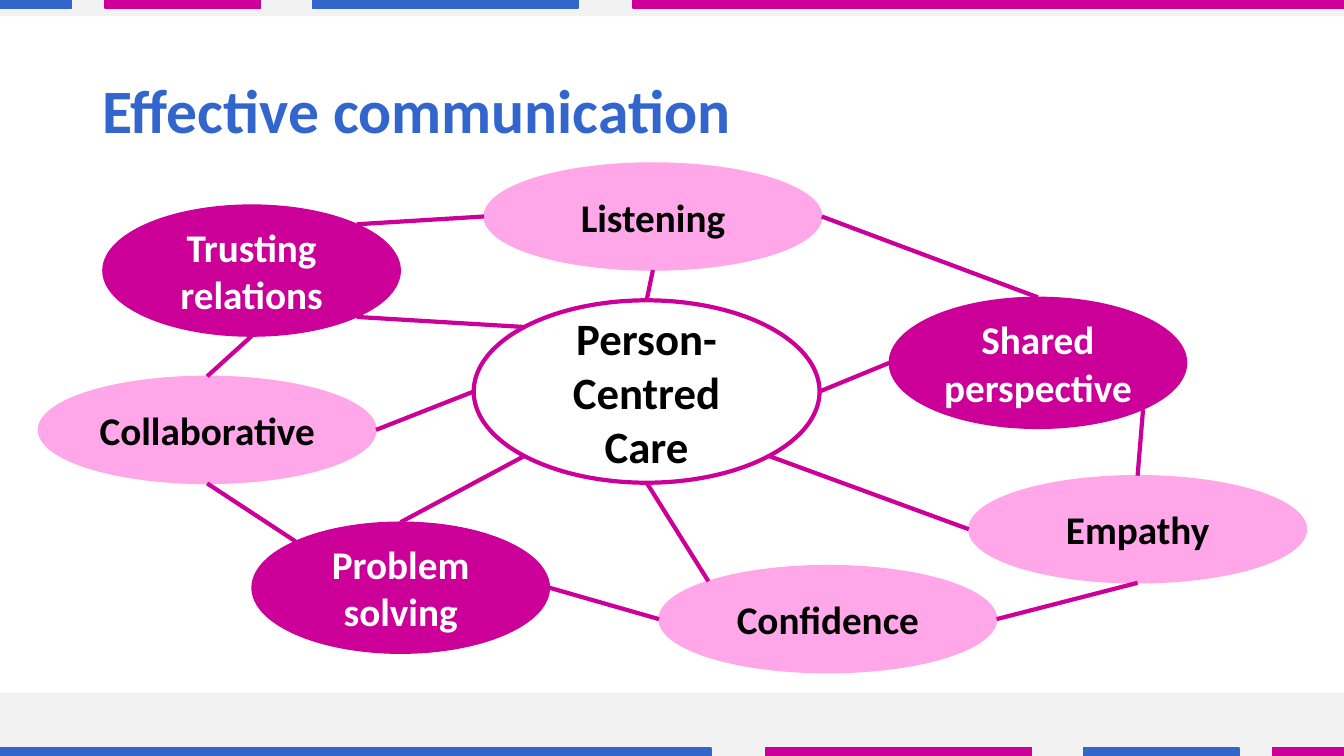
from math import sqrt

from lxml.etree import SubElement
from pptx import Presentation
from pptx.dml.color import RGBColor
from pptx.enum.shapes import MSO_CONNECTOR, MSO_SHAPE
from pptx.enum.text import MSO_ANCHOR, PP_ALIGN
from pptx.oxml.ns import qn
from pptx.util import Pt

WIDTH, HEIGHT = 960, 540
BLUE, MAGENTA, PINK, GREY = "3366CC", "CC0099", "FFA7E8", "F2F2F2"
WHITE, BLACK = "FFFFFF", "000000"
BAR_HEIGHT = 5.8
DIAGONAL = sqrt(0.5)
SITES = {
    "top": (0, -1), "bottom": (0, 1), "left": (-1, 0), "right": (1, 0),
    "top left": (-DIAGONAL, -DIAGONAL), "top right": (DIAGONAL, -DIAGONAL),
    "bottom left": (-DIAGONAL, DIAGONAL), "bottom right": (DIAGONAL, DIAGONAL),
}


def colour(hex_string):
    return RGBColor.from_string(hex_string)


class CommunicationSlide:
    """Draws the bands, title, ellipses and links of one slide in a shared style."""

    font_name = "Calibri"

    def __init__(self, slide):
        self.slide = slide
        self.ellipses = {}

    def style_text(self, paragraph, size, text_colour, align):
        paragraph.alignment = align
        paragraph.font.name = self.font_name
        paragraph.font.size = Pt(size)
        paragraph.font.bold = True
        paragraph.font.color.rgb = colour(text_colour)

    def shape(self, kind, box, fill, outline=None, outline_width=1):
        shape = self.slide.shapes.add_shape(kind, *map(Pt, box))
        shape.shadow.inherit = False
        shape.fill.solid()
        shape.fill.fore_color.rgb = colour(fill)
        if outline:
            shape.line.color.rgb = colour(outline)
            shape.line.width = Pt(outline_width)
        else:
            shape.line.fill.background()
        return shape

    def band(self, top, height):
        self.shape(MSO_SHAPE.RECTANGLE, (0, top, WIDTH, height), GREY)

    def bar(self, left, top, width, fill):
        self.shape(MSO_SHAPE.RECTANGLE, (left, top, width, BAR_HEIGHT), fill, fill)

    def title(self, text, box):
        title = self.slide.shapes.title
        title.left, title.top, title.width, title.height = map(Pt, box)
        frame = title.text_frame
        frame.text = text
        frame.word_wrap = True
        frame.vertical_anchor = MSO_ANCHOR.MIDDLE
        heading = frame.paragraphs[0]
        heading.line_spacing = 0.9
        self.style_text(heading, 44, BLUE, PP_ALIGN.LEFT)

    def ellipse(self, text, position, size, fill, outline, outline_width, text_size, text_colour):
        ellipse = self.shape(MSO_SHAPE.OVAL, position + size, fill, outline, outline_width)
        frame = ellipse.text_frame
        frame.text = text
        frame.word_wrap = True
        frame.vertical_anchor = MSO_ANCHOR.MIDDLE
        self.style_text(frame.paragraphs[0], text_size, text_colour, PP_ALIGN.CENTER)
        self.ellipses[text] = ellipse

    def site(self, topic, side):
        ellipse = self.ellipses[topic]
        across, down = SITES[side]
        return (int(ellipse.left + ellipse.width * (1 + across) / 2),
                int(ellipse.top + ellipse.height * (1 + down) / 2))

    def link(self, start, start_side, end, end_side):
        link = self.slide.shapes.add_connector(
            MSO_CONNECTOR.STRAIGHT, *self.site(start, start_side), *self.site(end, end_side))
        link.line.color.rgb = colour(MAGENTA)
        link.line.width = Pt(3)
        SubElement(link._element.spPr, qn("a:effectLst"))


CARE, LISTENING, TRUST = "Person-Centred Care", "Listening", "Trusting relations"
SHARED, EMPATHY, CONFIDENCE = "Shared perspective", "Empathy", "Confidence"
PROBLEM, COLLABORATIVE = "Problem solving", "Collaborative"

CENTRE = ((247, 130.3), WHITE, MAGENTA, 3, 32, BLACK)
DARK = ((212.4, 93.6), MAGENTA, MAGENTA, 1, 28, WHITE)
LIGHT = ((241.2, 76.5), PINK, PINK, 1, 28, BLACK)

TOPICS = [
    (CARE, (338.4, 214.5), CENTRE),
    (PROBLEM, (180, 373), DARK),
    (TRUST, (73.5, 146.5), DARK),
    (EMPATHY, (692, 339.8), LIGHT),
    (SHARED, (635.2, 212.4), DARK),
    (LISTENING, (345.8, 116.4), LIGHT),
    (CONFIDENCE, (470.7, 404), LIGHT),
    (COLLABORATIVE, (27.4, 268.8), LIGHT),
]

LINKS = [
    (LISTENING, "bottom", CARE, "top"),
    (LISTENING, "right", SHARED, "top"),
    (CARE, "bottom", CONFIDENCE, "top left"),
    (CARE, "right", SHARED, "left"),
    (CARE, "bottom right", EMPATHY, "left"),
    (TRUST, "bottom right", CARE, "top left"),
    (EMPATHY, "top", SHARED, "bottom right"),
    (EMPATHY, "bottom", CONFIDENCE, "right"),
    (TRUST, "top right", LISTENING, "left"),
    (CARE, "left", COLLABORATIVE, "right"),
    (COLLABORATIVE, "bottom", PROBLEM, "top left"),
    (CARE, "bottom left", PROBLEM, "top"),
    (CONFIDENCE, "left", PROBLEM, "right"),
    (TRUST, "bottom", COLLABORATIVE, "top"),
]

BARS = [
    (0, 508, BLUE, MAGENTA),
    (547, 190, MAGENTA, BLUE),
    (774, 111, BLUE, MAGENTA),
    (909, 51, MAGENTA, BLUE),
]


def main():
    deck = Presentation()
    deck.slide_width, deck.slide_height = Pt(WIDTH), Pt(HEIGHT)
    page = CommunicationSlide(deck.slides.add_slide(deck.slide_layouts[5]))

    page.band(495, 45)
    page.band(0, 11.5)
    for left, width, bottom_colour, top_colour in BARS:
        page.bar(left, HEIGHT - BAR_HEIGHT, width, bottom_colour)
        page.bar(WIDTH - left - width, 0, width, top_colour)

    page.title("Effective communication", (66, 28.8, 828, 104.4))
    for topic, position, look in TOPICS:
        page.ellipse(topic, position, *look)
    for link in LINKS:
        page.link(*link)

    deck.save("out.pptx")


if __name__ == "__main__":
    main()
